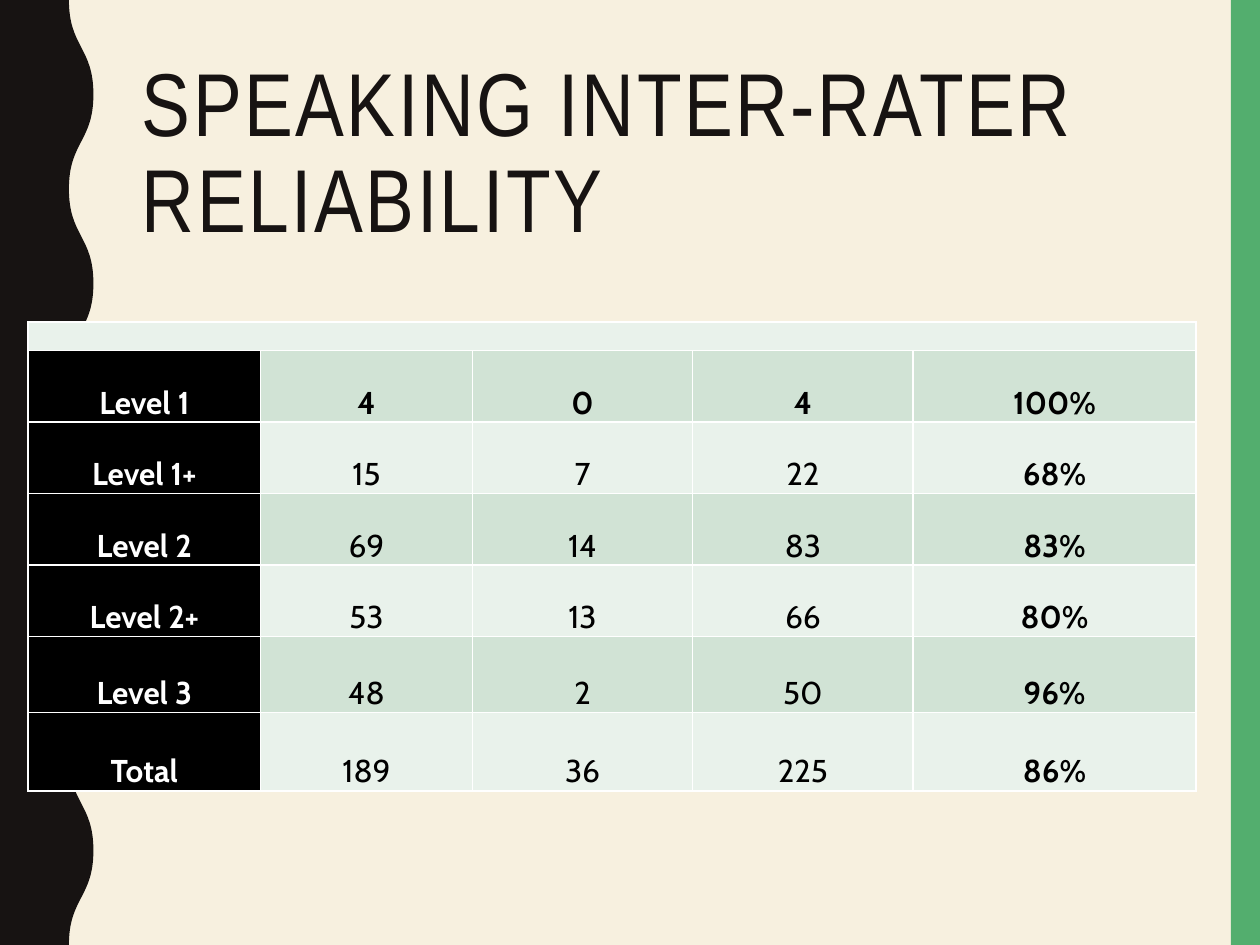
from lxml.etree import SubElement
from pptx import Presentation
from pptx.dml.color import RGBColor
from pptx.enum.shapes import MSO_SHAPE
from pptx.enum.text import MSO_ANCHOR, PP_ALIGN
from pptx.oxml import parse_xml
from pptx.oxml.ns import nsdecls, qn
from pptx.util import Pt

HUES = {"cream": "F7F0DF", "green": "53AE6E", "dark": "171312", "black": "000000",
        "white": "FFFFFF", "pale": "E9F2EB", "mint": "D1E3D5"}


def paint(fill, name):
    fill.solid()
    fill.fore_color.rgb = RGBColor.from_string(HUES[name])


def edge(cell):
    props = cell._tc.get_or_add_tcPr()
    for i, side in enumerate(("lnL", "lnR", "lnT", "lnB")):
        props.insert(i, parse_xml(
            f'<a:{side} {nsdecls("a")} w="12700"><a:solidFill>'
            f'<a:srgbClr val="{HUES["white"]}"/></a:solidFill></a:{side}>'))


deck = Presentation()
deck.slide_width, deck.slide_height = Pt(720), Pt(540)
slide = deck.slides.add_slide(deck.slide_layouts[6])
paint(slide.background.fill, "cream")

# Green bar on the right
bar = slide.shapes.add_shape(MSO_SHAPE.RECTANGLE, Pt(703.4), 0, Pt(16.6), Pt(540))

# Wavy band on the left, in hundredths of a point
low, high, half = 3940, 5340, 5400
turns = [(high if n % 2 else low, n * half) for n in range(11)]
pen = slide.shapes.build_freeform(*turns[0], scale=Pt(1) / 100)
pen.add_line_segments(turns[1:] + [(0, 10 * half), (0, 0)], close=True)
band = pen.convert_to_shape()
# Bend each half wave into an S curve
lines = list(band._element.iter(qn("a:lnTo")))
for line, (x, y), (to_x, to_y) in zip(lines, turns, turns[1:]):
    curve = line.makeelement(qn("a:cubicBezTo"))
    mid = (y + to_y) // 2
    for px, py in ((x, mid), (to_x, mid), (to_x, to_y)):
        SubElement(curve, qn("a:pt"), x=str(px), y=str(py))
    line.getparent().replace(line, curve)
for shape, hue in ((bar, "green"), (band, "dark")):
    paint(shape.fill, hue)
    shape.line.fill.background()
    shape.shadow.inherit = False

# Table of ratings
rows = [
    ("Level 1", "4", "0", "4", "100%"),
    ("Level 1+", "15", "7", "22", "68%"),
    ("Level 2", "69", "14", "83", "83%"),
    ("Level 2+", "53", "13", "66", "80%"),
    ("Level 3", "48", "2", "50", "96%"),
    ("Total", "189", "36", "225", "86%"),
]
wide = [133, 121, 125.9, 126, 161.5]
tall = [16.4] + [40.9] * 4 + [43.2, 45]
grid = slide.shapes.add_table(7, 5, Pt(16), Pt(183.9), Pt(sum(wide)), Pt(sum(tall))).table
for col, size in zip(grid.columns, wide):
    col.width = Pt(size)
for row, size in zip(grid.rows, tall):
    row.height = Pt(size)

# Empty merged strip on top
for cell in grid.rows[0].cells:
    paint(cell.fill, "pale")
    edge(cell)
    cell.margin_top = cell.margin_bottom = 0
    para = cell.text_frame.paragraphs[0]
    para._p.get_or_add_endParaRPr().set("sz", "800")
grid.cell(0, 0).merge(grid.cell(0, 4))

# Body cells
for r, words in enumerate(rows, 1):
    for c, word in enumerate(words):
        cell = grid.cell(r, c)
        paint(cell.fill, "black" if c == 0 else "mint" if r % 2 else "pale")
        edge(cell)
        cell.vertical_anchor = MSO_ANCHOR.BOTTOM
        cell.margin_left = cell.margin_right = cell.margin_top = Pt(0.7)
        cell.margin_bottom = 0
        cell.text = word
        para = cell.text_frame.paragraphs[0]
        para.alignment = PP_ALIGN.CENTER
        font = para.font
        font.name, font.size = "Cabin", Pt(18)
        font.bold = r == 1 or c in (0, 4)
        paint(font.fill, "black" if c else "white")

# Title
box = slide.shapes.add_textbox(Pt(73.9), Pt(30.2), Pt(601.2), Pt(117.4))
frame = box.text_frame
frame.word_wrap = True
frame.vertical_anchor = MSO_ANCHOR.MIDDLE
para = frame.paragraphs[0]
para.line_spacing = 0.9
run = para.add_run()
run.text = "SPEAKING INTER-RATER RELIABILITY"
run._r.get_or_add_rPr().set("spc", "150")
para.font.name, para.font.size = "Arial Narrow", Pt(51)
paint(para.font.fill, "dark")

deck.save("out.pptx")
